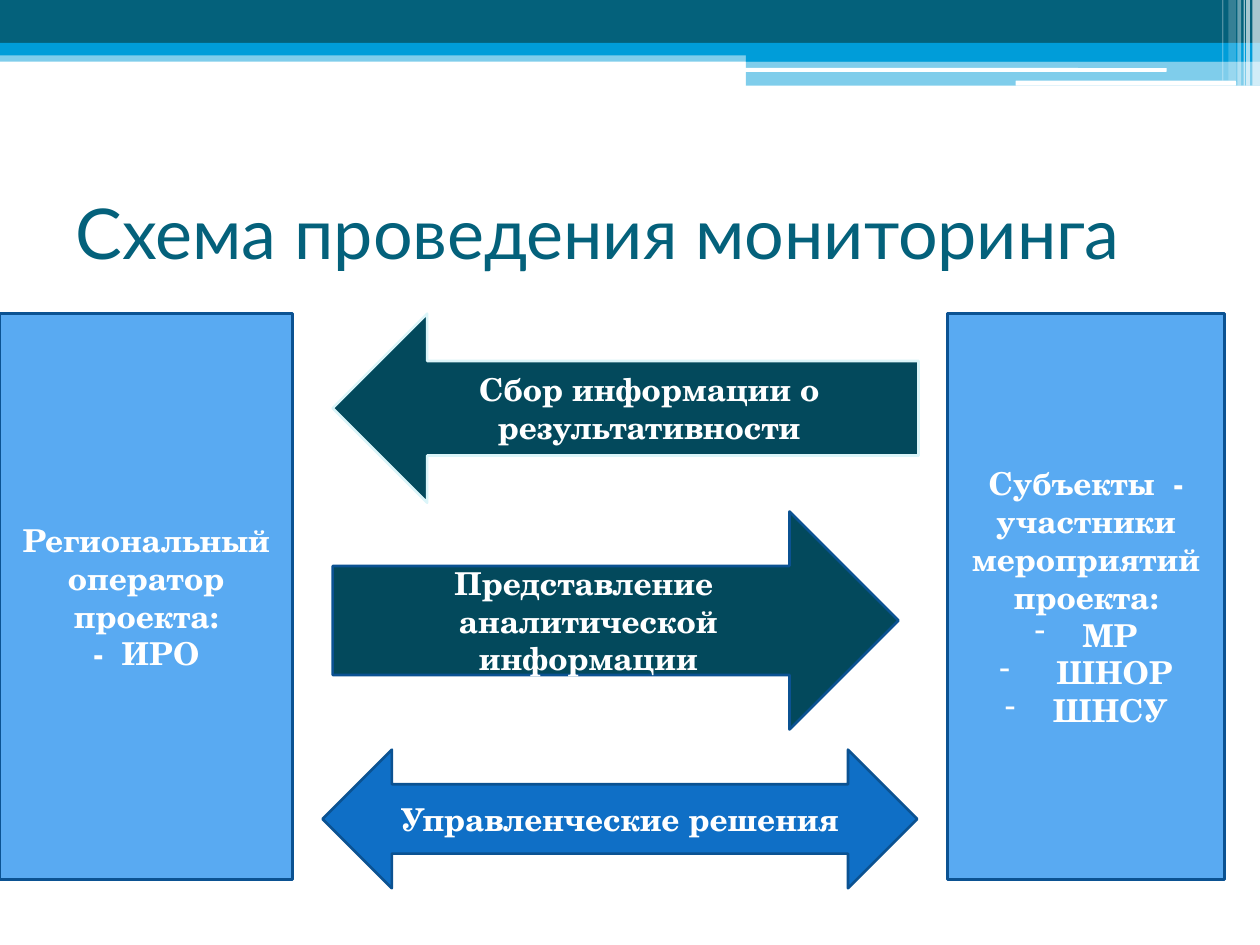
from dataclasses import dataclass

from lxml.etree import SubElement
from pptx import Presentation
from pptx.dml.color import RGBColor
from pptx.enum.shapes import MSO_SHAPE
from pptx.enum.text import MSO_ANCHOR, PP_ALIGN
from pptx.oxml.ns import qn
from pptx.util import Inches, Pt


@dataclass(frozen=True)
class Theme:
    white: str = "FFFFFF"
    teal: str = "04617B"
    dark_teal: str = "03495C"
    cyan: str = "009DD9"
    pale: str = "DBF5F9"
    sky: str = "59AAF2"
    blue: str = "0F6FC6"
    outline: str = "0B5292"
    title_font: str = "Lato"
    body_font: str = "TeX Gyre Schola"
    title_size: int = 40
    body_size: int = 18
    line_width: float = 1.5


THEME = Theme()


def add_block(page, kind, box, fill, line=None, opacity=100):
    """Add a filled preset shape; box is left, top, width, height in inches."""
    shape = page.shapes.add_shape(kind, *(Inches(length) for length in box))
    shape.shadow.inherit = False
    shape.fill.solid()
    shape.fill.fore_color.rgb = RGBColor.from_string(fill)
    if opacity < 100:
        color = shape.fill._xPr.find(qn("a:solidFill"))[0]
        SubElement(color, qn("a:alpha"), val=str(opacity * 1000))
    if line:
        shape.line.color.rgb = RGBColor.from_string(line)
        shape.line.width = Pt(THEME.line_width)
    else:
        shape.line.fill.background()
    return shape


def write_text(para, text, font=THEME.body_font, size=THEME.body_size,
               color=THEME.white, bold=True, align=PP_ALIGN.CENTER, bullet=None):
    para.alignment = align
    if bullet:
        properties = para._p.get_or_add_pPr()
        indent = Inches(0.31)
        properties.set("marL", str(indent))
        properties.set("indent", str(-indent))
        SubElement(properties, qn("a:buFontTx"))
        SubElement(properties, qn("a:buChar"), char=bullet)
    span = para.add_run()
    span.text = text
    span.font.name = font
    span.font.size = Pt(size)
    span.font.bold = bold
    span.font.color.rgb = RGBColor.from_string(color)


def add_banner(page, box):
    """Draw the layered bands and the fading stripes on the right."""
    left, top, width, height = box
    bar, rounded = MSO_SHAPE.RECTANGLE, MSO_SHAPE.ROUNDED_RECTANGLE
    tab = 5.92
    bands = [
        (bar, 0, 0.40, width, 0.09, THEME.cyan, 50),
        (bar, 0, 0, width, 0.34, THEME.teal, 100),
        (bar, 0, 0.34, width, 0.10, THEME.cyan, 100),
        (bar, tab, 0.39, width - tab, 0.10, THEME.cyan, 100),
        (bar, tab, 0.48, width - tab, 0.20, THEME.cyan, 50),
        (rounded, 5.91, 0.54, 3.35, 0.03, THEME.white, 100),
        (rounded, 8.06, 0.64, 1.75, 0.04, THEME.white, 100),
    ]
    # Stripes: left, width, height, opacity
    stripes = [
        (9.94, 0.06, height, 65), (9.89, 0.03, height, 65),
        (9.87, 0.01, height, 60), (9.82, 0.03, height, 40),
        (9.75, 0.06, 0.64, 20), (9.70, 0.01, 0.64, 30),
    ]
    bands += [(bar, x, 0, w, h, THEME.white, opacity)
              for x, w, h, opacity in stripes]
    for kind, x, y, w, h, fill, opacity in bands:
        add_block(page, kind, (left + x, top + y, w, h), fill, opacity=opacity)


def place_title(page, box, text):
    title = page.shapes.title
    title.left, title.top, title.width, title.height = map(Inches, box)
    frame = title.text_frame
    frame.word_wrap = True
    frame.vertical_anchor = MSO_ANCHOR.MIDDLE
    write_text(frame.paragraphs[0], text, font=THEME.title_font,
               size=THEME.title_size, color=THEME.teal, bold=False,
               align=PP_ALIGN.LEFT)


def add_labelled(page, kind, box, fill, lines, line=THEME.outline, bullets=()):
    """Add a shape holding centred lines, then bulleted ones."""
    frame = add_block(page, kind, box, fill, line).text_frame
    frame.word_wrap = True
    frame.vertical_anchor = MSO_ANCHOR.MIDDLE
    items = [(text, None) for text in lines] + [(text, "-") for text in bullets]
    for index, (text, bullet) in enumerate(items):
        para = frame.add_paragraph() if index else frame.paragraphs[0]
        write_text(para, text, bullet=bullet)


def add_scheme(page, box):
    """Place both parties at the sides and the exchanges between them."""
    left, top, width, height = box
    right_width = 2.2
    # Parties
    add_labelled(page, MSO_SHAPE.RECTANGLE, (left, top, 2.32, height), THEME.sky,
                 ["Региональный оператор проекта:", "-  ИРО"])
    add_labelled(page, MSO_SHAPE.RECTANGLE,
                 (left + width - right_width, top, right_width, height), THEME.sky,
                 ["Субъекты  - участники мероприятий проекта:"],
                 bullets=[" МР", "  ШНОР", " ШНСУ"])
    # Exchanges
    add_labelled(page, MSO_SHAPE.LEFT_RIGHT_ARROW,
                 (left + 2.56, top + 3.46, 4.72, 1.1), THEME.blue,
                 ["Управленческие решения"])
    add_labelled(page, MSO_SHAPE.LEFT_ARROW, (left + 2.64, top, 4.65, 1.5),
                 THEME.dark_teal, ["Сбор информации о результативности"],
                 line=THEME.pale)
    add_labelled(page, MSO_SHAPE.RIGHT_ARROW,
                 (left + 2.64, top + 1.57, 4.49, 1.73), THEME.dark_teal,
                 ["Представление  аналитической информации"])


def main():
    deck = Presentation()
    deck.slide_width, deck.slide_height = Inches(10), Inches(7.5)
    page = deck.slides.add_slide(deck.slide_layouts[5])
    add_banner(page, (0, 0, 10, 0.68))
    place_title(page, (0.5, 1.25, 9, 1.17), "Схема проведения мониторинга")
    add_scheme(page, (0, 2.49, 9.72, 4.49))
    deck.save("out.pptx")


if __name__ == "__main__":
    main()
